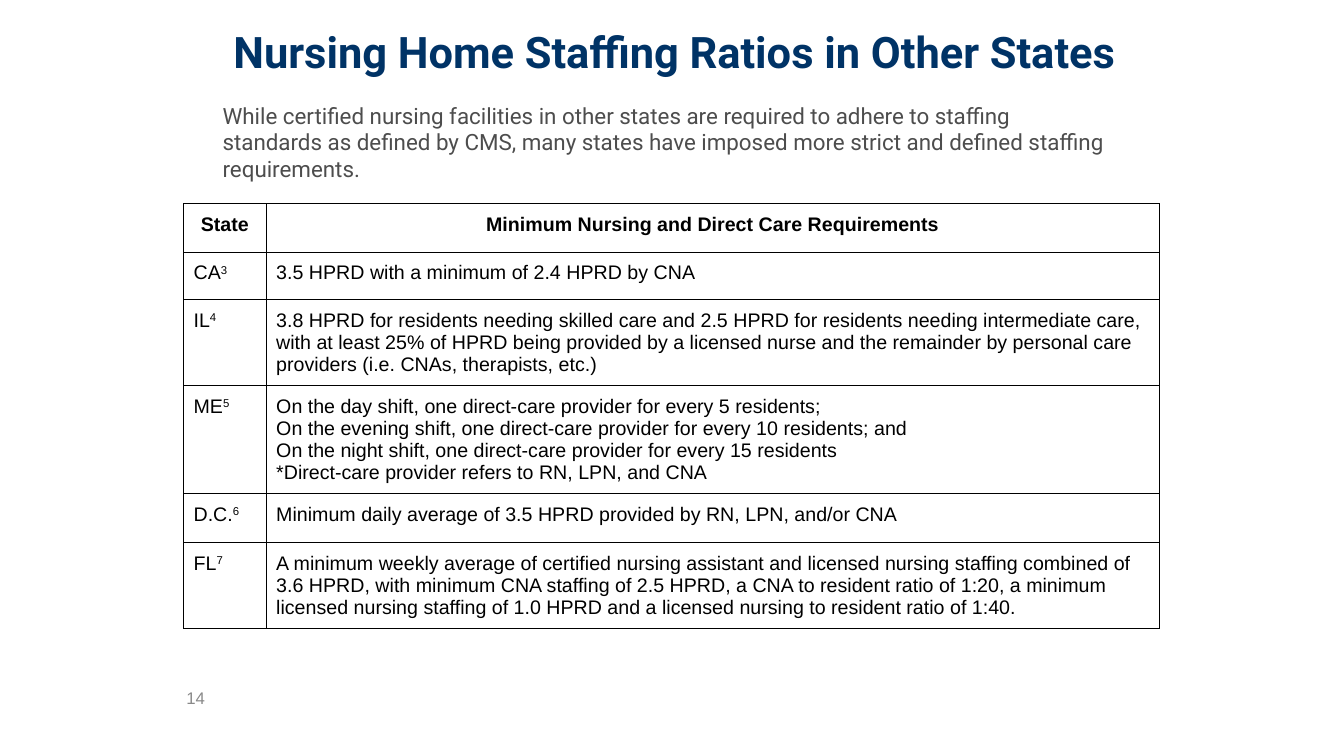
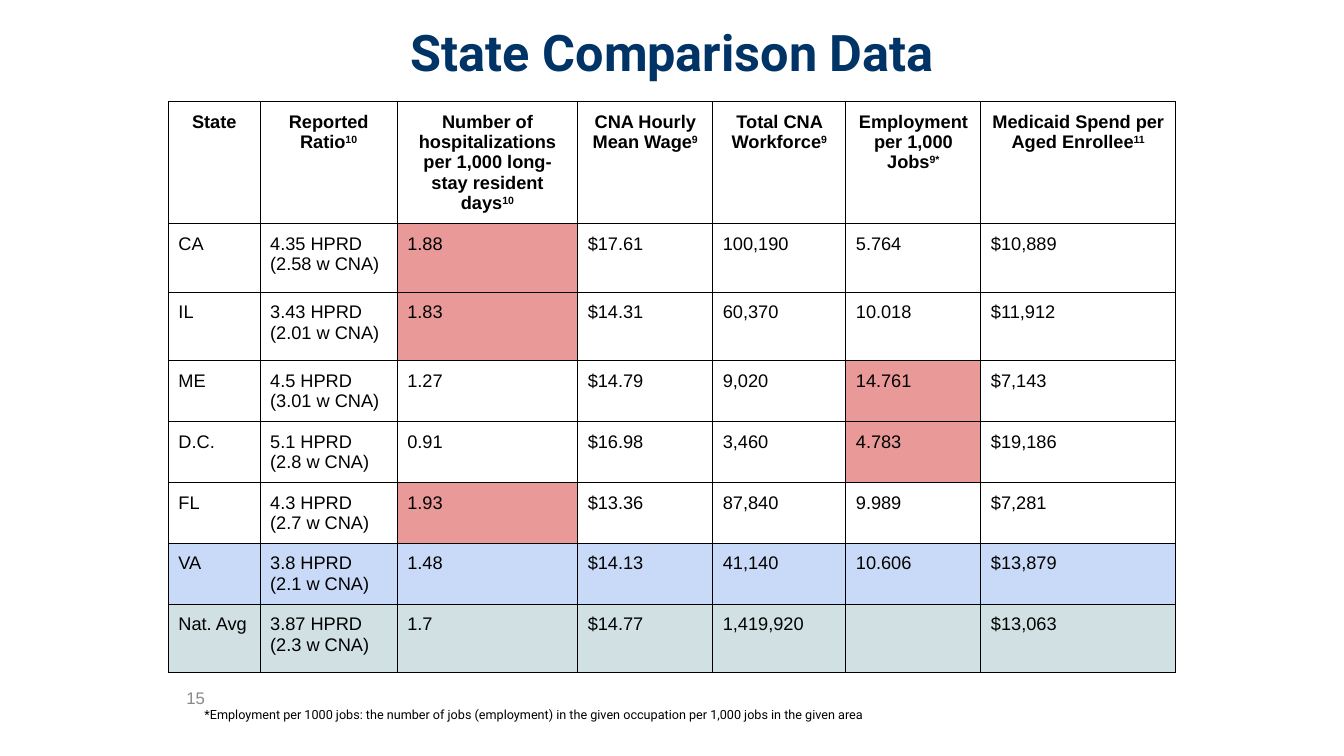
from pptx import Presentation
from pptx.dml.color import RGBColor
from pptx.enum.text import MSO_ANCHOR as Anchor, MSO_AUTO_SIZE as AutoSize, PP_ALIGN as Align
from pptx.oxml.ns import qn
from pptx.util import Inches, Pt
from lxml.etree import SubElement

COLORS = {
    "title": "003366",
    "body": "4D4D4D",
    "number": "898989",
    "ink": "000000",
    "flag": "EA9999",
    "home": "C9DAF8",
    "average": "D0E0E3",
}
HEADING_FONT = "Roboto"
TABLE_FONT = "Arial"


class Deck:
    """Holds the shared style and the slide being built."""

    def __init__(self):
        self.presentation = Presentation()
        self.presentation.slide_width = Inches(13.33)
        self.presentation.slide_height = Inches(7.5)
        self.slide = None

    def add_runs(self, paragraph, text, size, font, color, bold=False, align=Align.LEFT):
        """Add text run by run; whatever follows a ^ is superscript."""
        paragraph.alignment = align
        for index, part in enumerate(text.split("^")):
            run = paragraph.add_run()
            run.text = part
            run.font.size = Pt(size)
            run.font.name = font
            run.font.bold = bold
            run.font.color.rgb = RGBColor.from_string(COLORS[color])
            if index:
                run._r.get_or_add_rPr().set("baseline", "30000")

    def frame(self, shape, anchor, side=0.1, edge=0.05):
        """Set wrapping, anchor and margins; return the first paragraph."""
        text_frame = shape.text_frame
        text_frame.word_wrap = True
        text_frame.auto_size = AutoSize.NONE
        text_frame.vertical_anchor = anchor
        text_frame.margin_left = text_frame.margin_right = Inches(side)
        text_frame.margin_top = text_frame.margin_bottom = Inches(edge)
        return text_frame.paragraphs[0]

    def add_slide(self, title, box, size, number):
        self.slide = self.presentation.slides.add_slide(self.presentation.slide_layouts[5])
        shape = self.slide.shapes.title
        shape.left, shape.top, shape.width, shape.height = map(Inches, box)
        paragraph = self.frame(shape, Anchor.MIDDLE)
        self.add_runs(paragraph, title, size, HEADING_FONT, "title", True, Align.CENTER)
        self.add_text(number, (1.75, 6.67, 0.42, 0.5), 12, TABLE_FONT, "number", Anchor.MIDDLE)

    def add_text(self, text, box, size, font, color, anchor=Anchor.TOP, edge=0.05):
        shape = self.slide.shapes.add_textbox(*map(Inches, box))
        self.add_runs(self.frame(shape, anchor, edge=edge), text, size, font, color)

    def add_table(self, left, top, widths, heights, rows, size, fills=None):
        """Draw a ruled table; fills maps (row, column) to a colour name."""
        fills = fills or {}
        shape = self.slide.shapes.add_table(
            len(rows), len(widths), Inches(left), Inches(top),
            Inches(sum(widths)), Inches(sum(heights)))
        table = shape.table
        table.first_row = table.horz_banding = False
        for column, width in zip(table.columns, widths):
            column.width = Inches(width)
        for row, height in zip(table.rows, heights):
            row.height = Inches(height)
        for r, texts in enumerate(rows):
            for c, text in enumerate(texts):
                self.fill_cell(table.cell(r, c), text, size, r == 0, fills.get((r, c)))

    def fill_cell(self, cell, text, size, header, fill):
        cell.margin_left = cell.margin_right = Inches(0.1)
        cell.margin_top = cell.margin_bottom = Inches(0.1)
        self.add_borders(cell)
        if fill:
            cell.fill.solid()
            cell.fill.fore_color.rgb = RGBColor.from_string(COLORS[fill])
        else:
            cell.fill.background()
        if not text:
            return
        align = Align.CENTER if header else Align.LEFT
        for index, line in enumerate(text.split("\n")):
            frame = cell.text_frame
            paragraph = frame.add_paragraph() if index else frame.paragraphs[0]
            self.add_runs(paragraph, line, size, TABLE_FONT, "ink", header, align)

    def add_borders(self, cell):
        properties = cell._tc.get_or_add_tcPr()
        for side in ("a:lnL", "a:lnR", "a:lnT", "a:lnB"):
            line = SubElement(properties, qn(side), w=str(Pt(0.75)))
            solid = SubElement(line, qn("a:solidFill"))
            SubElement(solid, qn("a:srgbClr"), val=COLORS["ink"])


REQUIREMENTS = [
    ("State", "Minimum Nursing and Direct Care Requirements"),
    ("CA^3", "3.5 HPRD with a minimum of 2.4 HPRD by CNA"),
    ("IL^4", "3.8 HPRD for residents needing skilled care and 2.5 HPRD for residents needing "
             "intermediate care, with at least 25% of HPRD being provided by a licensed nurse "
             "and the remainder by personal care providers (i.e. CNAs, therapists, etc.)"),
    ("ME^5", "On the day shift, one direct-care provider for every 5 residents;\n"
             "On the evening shift, one direct-care provider for every 10 residents; and\n"
             "On the night shift, one direct-care provider for every 15 residents\n"
             "*Direct-care provider refers to RN, LPN, and CNA"),
    ("D.C.^6", "Minimum daily average of 3.5 HPRD provided by RN, LPN, and/or CNA"),
    ("FL^7", "A minimum weekly average of certified nursing assistant and licensed nursing "
             "staffing combined of 3.6 HPRD, with minimum CNA staffing of 2.5 HPRD, a CNA to "
             "resident ratio of 1:20, a minimum licensed nursing staffing of 1.0 HPRD and a "
             "licensed nursing to resident ratio of 1:40."),
]

COMPARISON = [
    ("State", "Reported Ratio^10",
     "Number of hospitalizations per 1,000 long-stay resident days^10",
     "CNA Hourly Mean Wage^9", "Total CNA Workforce^9",
     "Employment per 1,000 Jobs^9*", "Medicaid Spend per Aged Enrollee^11"),
    ("CA", "4.35 HPRD (2.58 w CNA)", "1.88", "$17.61", "100,190", "5.764", "$10,889"),
    ("IL", "3.43 HPRD (2.01 w CNA)", "1.83", "$14.31", "60,370", "10.018", "$11,912"),
    ("ME", "4.5 HPRD (3.01 w CNA)", "1.27", "$14.79", "9,020", "14.761", "$7,143"),
    ("D.C.", "5.1 HPRD (2.8 w CNA)", "0.91", "$16.98", "3,460", "4.783", "$19,186"),
    ("FL", "4.3 HPRD (2.7 w CNA)", "1.93", "$13.36", "87,840", "9.989", "$7,281"),
    ("VA", "3.8 HPRD (2.1 w CNA)", "1.48", "$14.13", "41,140", "10.606", "$13,879"),
    ("Nat. Avg", "3.87 HPRD (2.3 w CNA)", "1.7", "$14.77", "1,419,920", "", "$13,063"),
]


def main():
    deck = Deck()

    # Requirements by state
    deck.add_slide("Nursing Home Staffing Ratios in Other States",
                   (2.05, 0.05, 9.27, 0.91), 31, "14")
    deck.add_text("While certified nursing facilities in other states are required to adhere to "
                  "staffing standards as defined by CMS, many states have imposed more strict "
                  "and defined staffing requirements.",
                  (2.11, 0.96, 9, 1.09), 16, HEADING_FONT, "body")
    deck.add_table(1.82, 2.02, [0.82, 8.86], [0.48, 0.47, 0.85, 1.07, 0.48, 0.85],
                   REQUIREMENTS, 14)

    # Comparison figures, with outliers and the two reference rows shaded
    deck.add_slide("State Comparison Data", (2.17, -0.12, 9, 1.25), 36, "15")
    fills = {cell: "flag" for cell in ((1, 2), (2, 2), (5, 2), (3, 5), (4, 5))}
    for row, color in ((6, "home"), (7, "average")):
        fills.update({(row, column): color for column in range(7)})
    deck.add_table(1.67, 1.01, [0.91, 1.36, 1.79, 1.34, 1.32, 1.34, 1.93],
                   [1.21] + [0.68] * 2 + [0.6] * 4 + [0.68], COMPARISON, 13, fills)
    deck.add_text("*Employment per 1000 jobs: the number of jobs (employment) in the given "
                  "occupation per 1,000 jobs in the given area",
                  (1.93, 6.91, 7.34, 0.33), 9, HEADING_FONT, "ink", edge=0.1)

    deck.presentation.save("out.pptx")


if __name__ == "__main__":
    main()
